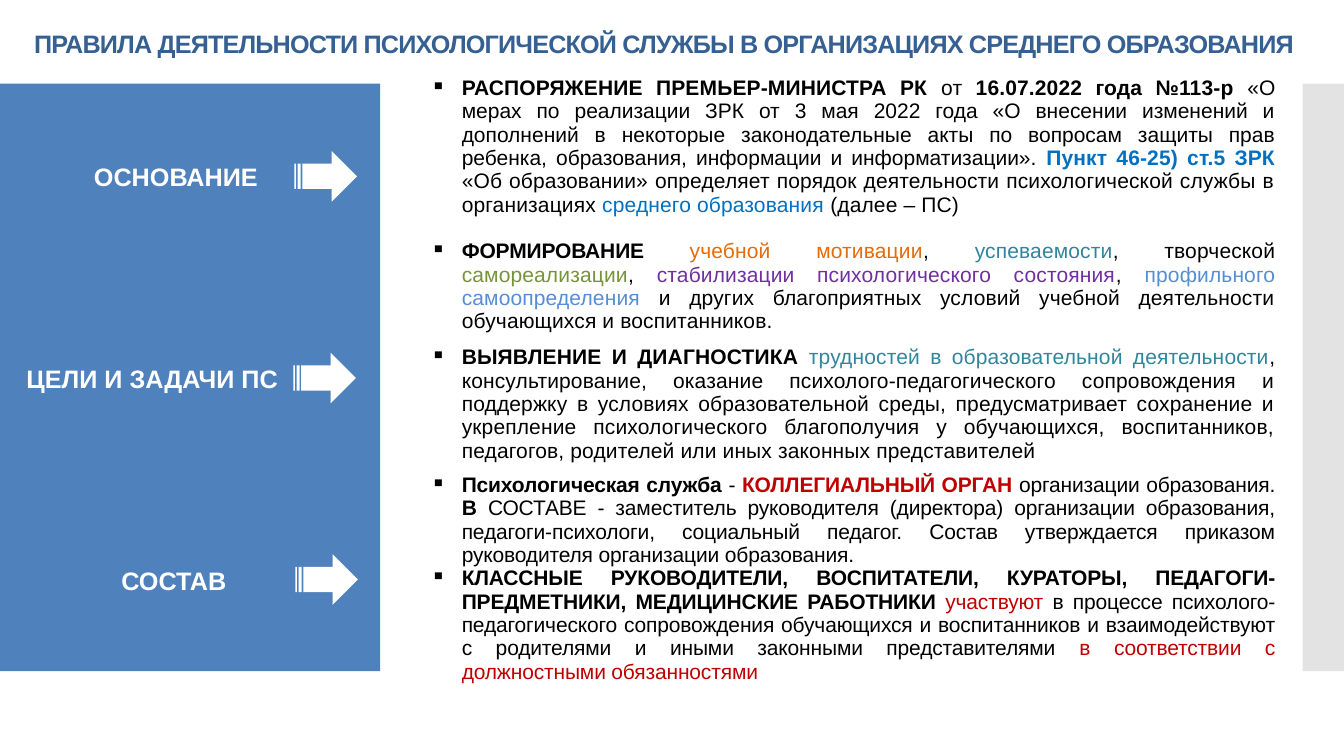
import dataclasses

import lxml.etree
import pptx
import pptx.dml.color
import pptx.enum.shapes
import pptx.enum.text
import pptx.oxml.ns
import pptx.util

Inches = pptx.util.Inches
Pt = pptx.util.Pt
Shape = pptx.enum.shapes.MSO_SHAPE
Align = pptx.enum.text.PP_ALIGN
Anchor = pptx.enum.text.MSO_ANCHOR
qn = pptx.oxml.ns.qn


@dataclasses.dataclass(frozen=True)
class Theme:
    font: str = "Arial"
    heading_size: int = 18
    body_size: int = 15
    navy: str = "376092"
    panel: str = "4F81BD"
    edge: str = "C8C8C8"
    white: str = "FFFFFF"
    black: str = "000000"
    blue: str = "0070C0"
    orange: str = "E46C0A"
    teal: str = "31859C"
    green: str = "77933C"
    purple: str = "7030A0"
    sky: str = "558ED5"
    red: str = "C00000"


THEME = Theme()


@dataclasses.dataclass(frozen=True)
class Span:
    text: str
    color: str = THEME.black
    bold: bool = False
    spacing: float = 0.1


@dataclasses.dataclass(frozen=True)
class Item:
    spans: tuple
    space_before: float = 0


class SlideBuilder:
    def __init__(self, slide, theme):
        self.slide = slide
        self.theme = theme

    def rgb(self, color):
        return pptx.dml.color.RGBColor.from_string(color)

    def style(self, paragraph, size, align):
        paragraph.alignment = align
        paragraph.font.name = self.theme.font
        paragraph.font.size = Pt(size)

    def add_span(self, paragraph, span):
        """Append a run; letter spacing is in points."""
        run = paragraph.add_run()
        run.text = span.text
        run.font.bold = span.bold
        run.font.color.rgb = self.rgb(span.color)
        if span.spacing:
            run._r.get_or_add_rPr().set("spc", str(round(span.spacing * 100)))

    def title(self, text, left, top, width, height):
        box = self.slide.shapes.add_textbox(
            Inches(left), Inches(top), Inches(width), Inches(height))
        frame = box.text_frame
        frame.word_wrap = True
        frame.vertical_anchor = Anchor.MIDDLE
        frame.margin_left = frame.margin_right = frame.margin_bottom = 0
        frame.margin_top = Inches(0.01)
        heading = frame.paragraphs[0]
        self.style(heading, self.theme.heading_size, Align.CENTER)
        heading.space_before = Pt(1)
        self.add_span(heading, Span(text, self.theme.navy, True, -0.6))

    def shape(self, kind, left, top, width, height, color, opacity=100):
        shape = self.slide.shapes.add_shape(
            kind, Inches(left), Inches(top), Inches(width), Inches(height))
        shape.shadow.inherit = False
        shape.fill.solid()
        shape.fill.fore_color.rgb = self.rgb(color)
        shape.line.fill.background()
        if opacity < 100:
            tint = shape._element.spPr.find(".//" + qn("a:srgbClr"))
            lxml.etree.SubElement(tint, qn("a:alpha"), val=str(opacity * 1000))
        return shape

    def label(self, text, left, top, width, height):
        box = self.shape(Shape.RECTANGLE, left, top, width, height, self.theme.panel)
        box.text_frame.vertical_anchor = Anchor.MIDDLE
        caption = box.text_frame.paragraphs[0]
        self.style(caption, self.theme.heading_size, Align.CENTER)
        self.add_span(caption, Span(text, self.theme.white, True, 0))

    def bullet(self, paragraph, item):
        properties = paragraph._p.get_or_add_pPr()
        indent = Inches(0.31)
        properties.set("marL", str(indent))
        properties.set("indent", str(-indent))
        lxml.etree.SubElement(properties, qn("a:buChar"), char="▪")
        self.style(paragraph, self.theme.body_size, Align.JUSTIFY)
        if item.space_before:
            paragraph.space_before = Pt(item.space_before)
        for span in item.spans:
            self.add_span(paragraph, span)

    def table(self, sections, heights, left, top, width):
        table = self.slide.shapes.add_table(
            len(sections), 1, Inches(left), Inches(top),
            Inches(width), Inches(sum(heights))).table
        table.first_row = table.horz_banding = False
        for row, height, items in zip(table.rows, heights, sections):
            row.height = Inches(height)
            cell = row.cells[0]
            cell.fill.solid()
            cell.fill.fore_color.rgb = self.rgb(self.theme.white)
            cell.vertical_anchor = Anchor.MIDDLE
            frame = cell.text_frame
            for index, item in enumerate(items):
                paragraph = frame.add_paragraph() if index else frame.paragraphs[0]
                self.bullet(paragraph, item)


BASIS = (Item((
    Span("РАСПОРЯЖЕНИЕ ПРЕМЬЕР-МИНИСТРА РК ", bold=True),
    Span("от "),
    Span("16.07.2022 года №113-р ", bold=True),
    Span("«"),
    Span("О мерах по реализации ЗРК от 3 мая 2022 года «О внесении изменений и дополнений "
         "в некоторые законодательные акты по вопросам защиты прав ребенка, образования, "
         "информации и информатизации». ", spacing=0),
    Span("Пункт 46-25) ст.5 ЗРК ", THEME.blue, True),
    Span("«Об образовании» определяет порядок деятельности психологической службы "
         "в организациях "),
    Span("среднего образования ", THEME.blue),
    Span("(далее – ПС)"),
)),)

GOALS = (
    Item((
        Span("ФОРМИРОВАНИЕ ", bold=True, spacing=-0.1),
        Span("учебной мотивации", THEME.orange),
        Span(", "),
        Span("успеваемости", THEME.teal),
        Span(", творческой "),
        Span("самореализации", THEME.green),
        Span(", "),
        Span("стабилизации психологического состояния", THEME.purple),
        Span(", "),
        Span("профильного самоопределения", THEME.sky),
        Span(" и других благоприятных условий учебной деятельности обучающихся "
             "и воспитанников."),
    )),
    Item((
        Span("ВЫЯВЛЕНИЕ И ДИАГНОСТИКА ", bold=True),
        Span("трудностей в образовательной деятельности", THEME.teal),
        Span(", консультирование, оказание психолого-педагогического сопровождения и поддержку "
             "в условиях образовательной среды, предусматривает сохранение и укрепление "
             "психологического благополучия у обучающихся, воспитанников, педагогов, "
             "родителей или иных законных представителей"),
    ), space_before=9),
)

MEMBERS = (
    Item((
        Span("Психологическая служба ", bold=True, spacing=-0.1),
        Span("- ", spacing=-0.1),
        Span("КОЛЛЕГИАЛЬНЫЙ ОРГАН ", THEME.red, True, -0.1),
        Span("организации образования. ", spacing=-0.1),
        Span("В ", bold=True, spacing=-0.1),
        Span("СОСТАВЕ - заместитель руководителя (директора) организации образования, "
             "педагоги-психологи, социальный педагог. Состав утверждается приказом "
             "руководителя организации образования.", spacing=-0.1),
    )),
    Item((
        Span("КЛАССНЫЕ РУКОВОДИТЕЛИ, ВОСПИТАТЕЛИ, КУРАТОРЫ, ПЕДАГОГИ-ПРЕДМЕТНИКИ, "
             "МЕДИЦИНСКИЕ РАБОТНИКИ ", bold=True, spacing=-0.1),
        Span("участвуют ", THEME.red, spacing=-0.1),
        Span("в процессе психолого-педагогического сопровождения обучающихся и воспитанников "
             "и взаимодействуют с родителями и иными законными представителями ", spacing=-0.1),
        Span("в соответствии с должностными обязанностями", THEME.red, spacing=-0.1),
    )),
)


def main():
    deck = pptx.Presentation()
    deck.slide_width, deck.slide_height = Inches(13.33), Inches(7.5)
    builder = SlideBuilder(deck.slides.add_slide(deck.slide_layouts[6]), THEME)
    builder.shape(Shape.RECTANGLE, 0, 0.83, 3.77, 5.83, THEME.panel)
    builder.shape(Shape.RECTANGLE, 12.92, 0.83, 0.42, 5.83, THEME.edge, opacity=50)
    builder.table((BASIS, GOALS, MEMBERS), (1.75, 2.31, 2.2), 4.17, 0.58, 8.58)
    builder.title("ПРАВИЛА ДЕЯТЕЛЬНОСТИ ПСИХОЛОГИЧЕСКОЙ СЛУЖБЫ В ОРГАНИЗАЦИЯХ "
                  "СРЕДНЕГО ОБРАЗОВАНИЯ", 0, 0.27, 13.17, 0.32)
    labels = (("ОСНОВАНИЕ", 0.58, 2.33, 2.92),
              ("ЦЕЛИ И ЗАДАЧИ ПС", 0.01, 3, 2.91),
              ("СОСТАВ", 0.56, 2.33, 2.93))
    for index, (text, left, width, arrow_left) in enumerate(labels):
        top = 1.42 + 2 * index
        builder.label(text, left, top, width, 0.67)
        builder.shape(Shape.STRIPED_RIGHT_ARROW, arrow_left, top + 0.08, 0.62, 0.5, THEME.white)
    deck.save("out.pptx")


if __name__ == "__main__":
    main()
